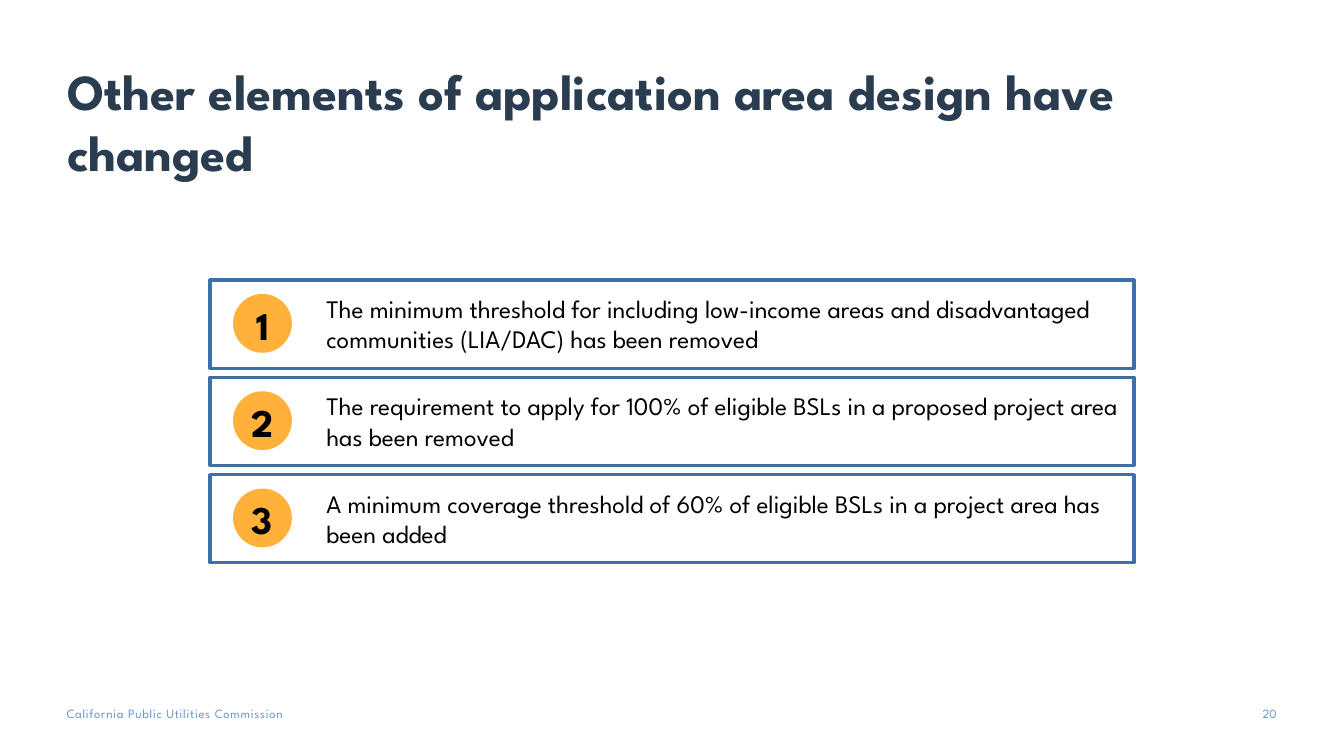
from dataclasses import dataclass

import pptx
import pptx.dml.color
import pptx.enum.shapes
import pptx.enum.text
import pptx.presentation
import pptx.shapes.autoshape
import pptx.slide
import pptx.util

Pt = pptx.util.Pt
Align = pptx.enum.text.PP_ALIGN
Anchor = pptx.enum.text.MSO_ANCHOR
Preset = pptx.enum.shapes.MSO_SHAPE


@dataclass(frozen=True)
class Theme:
    font: str = "League Spartan"
    title_color: str = "2A3C50"
    text_color: str = "000000"
    footer_color: str = "6996C9"
    border_color: str = "3D6FA9"
    badge_color: str = "FFB13A"
    title_size: float = 36
    number_size: float = 28
    statement_size: float = 18
    footer_size: float = 9
    border_width: float = 2.25


@dataclass(frozen=True)
class Frame:
    left: float
    top: float
    width: float
    height: float

    def lengths(self) -> tuple[int, int, int, int]:
        return Pt(self.left), Pt(self.top), Pt(self.width), Pt(self.height)


@dataclass(frozen=True)
class TextStyle:
    size: float
    color: str
    bold: bool = False
    align: Align = Align.LEFT
    anchor: Anchor = Anchor.TOP
    insets: tuple[float, float, float, float] = (7.2, 3.6, 7.2, 3.6)
    spacing: float = 0


@dataclass(frozen=True)
class Change:
    number: int
    statement: str


THEME = Theme()
TITLE = TextStyle(THEME.title_size, THEME.title_color, True, anchor=Anchor.BOTTOM, insets=(0, 3.6, 7.2, 3.6))
NUMBER = TextStyle(THEME.number_size, THEME.text_color, True, Align.CENTER, Anchor.MIDDLE, (4.5, 4.5, 4.5, 4.5))
STATEMENT = TextStyle(THEME.statement_size, THEME.text_color)
FOOTER = TextStyle(THEME.footer_size, THEME.footer_color, insets=(0, 0, 0, 0), spacing=0.5)
PAGE_NUMBER = TextStyle(THEME.footer_size, THEME.footer_color, align=Align.RIGHT, insets=(0, 0, 0, 0))

CHANGES = [
    Change(1, "The minimum threshold for including low-income areas and disadvantaged communities (LIA/DAC) has been removed"),
    Change(2, "The requirement to apply for 100% of eligible BSLs in a proposed project area has been removed"),
    Change(3, "A minimum coverage threshold of 60% of eligible BSLs in a project area has been added"),
]
FIRST_ROW_TOP = 200
ROW_PITCH = 69.5


def rgb(color: str) -> pptx.dml.color.RGBColor:
    return pptx.dml.color.RGBColor.from_string(color)


def write_text(box: pptx.shapes.autoshape.Shape, text: str, style: TextStyle) -> None:
    frame = box.text_frame
    frame.text = text
    frame.word_wrap = True
    frame.auto_size = pptx.enum.text.MSO_AUTO_SIZE.NONE
    frame.vertical_anchor = style.anchor
    frame.margin_left, frame.margin_top, frame.margin_right, frame.margin_bottom = map(Pt, style.insets)
    para = frame.paragraphs[0]
    para.alignment = style.align
    span = para.runs[0]
    span.font.name = THEME.font
    span.font.size = Pt(style.size)
    span.font.bold = style.bold
    span.font.color.rgb = rgb(style.color)
    if style.spacing:
        span._r.get_or_add_rPr().set("spc", str(int(style.spacing * 100)))


def add_text(shapes, frame: Frame, text: str, style: TextStyle) -> None:
    write_text(shapes.add_textbox(*frame.lengths()), text, style)


def add_title(page: pptx.slide.Slide, text: str) -> None:
    title = page.shapes.title
    title.left, title.top, title.width, title.height = Frame(48, 29, 864, 104).lengths()
    write_text(title, text, TITLE)


def add_change(page: pptx.slide.Slide, change: Change, top: float) -> None:
    border = page.shapes.add_shape(Preset.RECTANGLE, *Frame(150, top, 660, 63).lengths())
    border.shadow.inherit = False
    border.fill.background()
    border.line.color.rgb = rgb(THEME.border_color)
    border.line.width = Pt(THEME.border_width)

    badge = page.shapes.add_group_shape()
    circle = badge.shapes.add_shape(Preset.OVAL, *Frame(166.5, top + 10, 42, 42).lengths())
    circle.shadow.inherit = False
    circle.fill.solid()
    circle.fill.fore_color.rgb = rgb(THEME.badge_color)
    circle.line.fill.background()
    add_text(badge.shapes, Frame(170.5, top + 10.75, 34, 42), str(change.number), NUMBER)

    add_text(page.shapes, Frame(226, top + 6, 583.5, 51), change.statement, STATEMENT)


def main() -> None:
    deck: pptx.presentation.Presentation = pptx.Presentation()
    deck.slide_width, deck.slide_height = Pt(960), Pt(540)
    page = deck.slides.add_slide(deck.slide_layouts.get_by_name("Title Only"))
    add_title(page, "Other elements of application area design have changed")
    for index, change in enumerate(CHANGES):
        add_change(page, change, FIRST_ROW_TOP + index * ROW_PITCH)
    add_text(page.shapes, Frame(47.5, 504, 231, 11), "California Public Utilities Commission", FOOTER)
    add_text(page.shapes, Frame(882, 504, 30, 14.5), "20", PAGE_NUMBER)
    deck.save("out.pptx")


if __name__ == "__main__":
    main()
